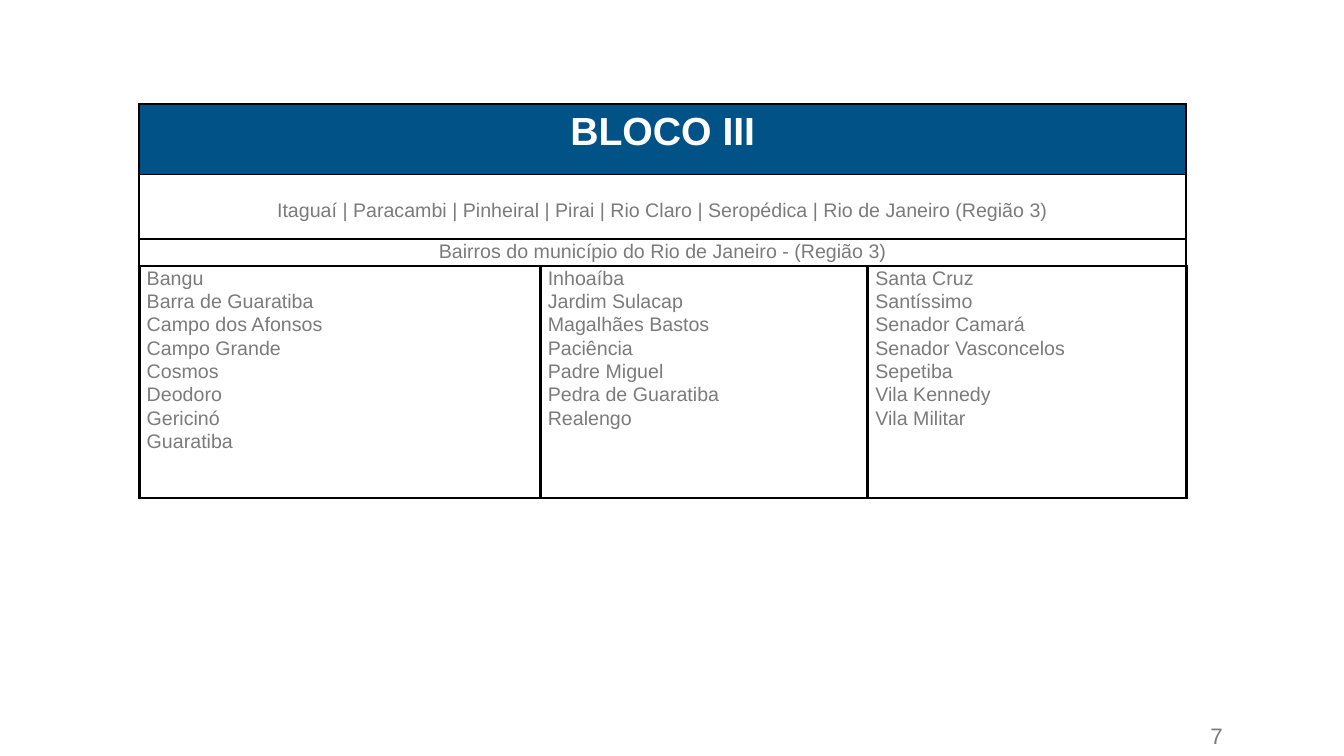
from pptx import Presentation
from pptx.dml.color import RGBColor as Rgb
from pptx.enum.text import PP_ALIGN as Align
from pptx.oxml import parse_xml
from pptx.oxml.ns import nsdecls
from pptx.util import Pt

HUES = {"head": "005287", "text": "7B7B7B", "white": "FFFFFF", "line": "000000"}
COLS = [286.5, 234, 227.5]
ROWS = [50.4, 46.1, 19.4, 165.6]
BANDS = [
    ("BLOCO III", dict(size=28, hue="white", bold=True, space=1.15), 0),
    ("Itaguaí | Paracambi | Pinheiral | Pirai | Rio Claro | Seropédica"
     " | Rio de Janeiro (Região 3)", {}, 17),
    ("Bairros do município do Rio de Janeiro - (Região 3)", {}, 0),
]
AREAS = [
    ["Bangu", "Barra de Guaratiba", "Campo dos Afonsos", "Campo Grande",
     "Cosmos", "Deodoro", "Gericinó", "Guaratiba"],
    ["Inhoaíba", "Jardim Sulacap", "Magalhães Bastos", "Paciência",
     "Padre Miguel", "Pedra de Guaratiba", "Realengo"],
    ["Santa Cruz", "Santíssimo", "Senador Camará", "Senador Vasconcelos",
     "Sepetiba", "Vila Kennedy", "Vila Militar"],
]


def write(frame, lines, align, size=14, hue="text", bold=False, space=1.06):
    """Fill a text frame with one paragraph per line."""
    frame.text = "\n".join(lines)
    for para in frame.paragraphs:
        para.alignment, para.line_spacing = align, space
        look = {"name": "Arial", "size": Pt(size), "bold": bold}
        for key, value in look.items():
            setattr(para.font, key, value)
        para.font.color.rgb = Rgb.from_string(HUES[hue])


def dress(cell, fill, top, widths):
    """Set the margins, borders and fill of a cell."""
    for side, gap in {"left": 5.4, "right": 5.4, "top": top, "bottom": 0}.items():
        setattr(cell, f"margin_{side}", Pt(gap))
    props = cell._tc.get_or_add_tcPr()
    for side, width in zip("LRTB", widths):
        props.append(parse_xml(
            f'<a:ln{side} {nsdecls("a")} w="{Pt(width)}"><a:solidFill>'
            f'<a:srgbClr val="{HUES["line"]}"/></a:solidFill></a:ln{side}>'))
    if fill:
        cell.fill.solid()
        cell.fill.fore_color.rgb = Rgb.from_string(HUES[fill])
    else:
        cell.fill.background()


def block(slide, left, top):
    """Draw the table of towns and districts."""
    box = [Pt(n) for n in (left, top, sum(COLS), sum(ROWS))]
    grid = slide.shapes.add_table(len(ROWS), len(COLS), *box).table
    grid.first_row = grid.horz_banding = False
    for col, width in zip(grid.columns, COLS):
        col.width = Pt(width)
    for row, height in zip(grid.rows, ROWS):
        row.height = Pt(height)
    last = len(BANDS)
    for i, (text, look, gap) in enumerate(BANDS):
        low = 2.25 if i == last - 1 else 1.5
        for cell in grid.rows[i].cells:
            dress(cell, None if i else "head", gap, (1.5, 1.5, 1.5, low))
        grid.cell(i, 0).merge(grid.cell(i, len(COLS) - 1))
        write(grid.cell(i, 0).text_frame, [text], Align.CENTER, **look)
    for cell, names in zip(grid.rows[last].cells, AREAS):
        dress(cell, None, 0, [2.25] * 4)
        write(cell.text_frame, names, Align.JUSTIFY)


def folio(slide, left, top, width, height):
    """Place the page number."""
    box = [Pt(n) for n in (left, top, width, height)]
    frame = slide.shapes.add_textbox(*box).text_frame
    frame.word_wrap = True
    for side in ("left", "right", "top", "bottom"):
        setattr(frame, f"margin_{side}", Pt(3.6))
    write(frame, ["7"], Align.LEFT, size=16, space=1.0)


def main():
    """Build and save the slide."""
    deck = Presentation()
    deck.slide_width, deck.slide_height = Pt(960), Pt(540)
    slide = deck.slides.add_slide(deck.slide_layouts[6])
    block(slide, 99.4, 74.2)
    folio(slide, 861, 512.6, 99, 26.6)
    deck.save("out.pptx")


if __name__ == "__main__":
    main()
